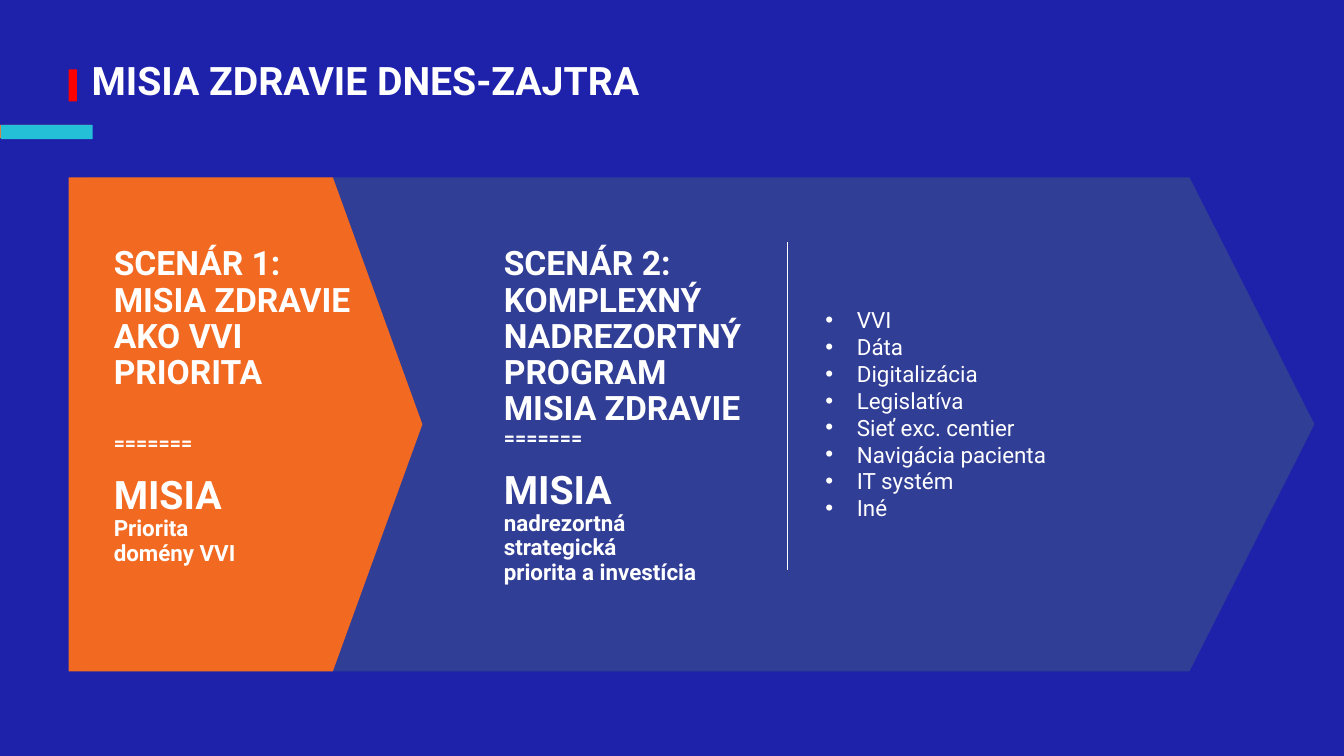
from lxml import etree
from pptx import Presentation
from pptx.dml.color import RGBColor
from pptx.enum.shapes import MSO_CONNECTOR as Connector, MSO_SHAPE as Shape
from pptx.enum.text import MSO_ANCHOR as Anchor
from pptx.oxml.ns import qn
from pptx.util import Pt

FONT = "Roboto"
WHITE = "FFFFFF"
ARROW_POINT = 0.253
TEXT_TOP = 46.1  # distance from the top of an arrow to its text
BLANK_LINE = 14.8

PROGRAM_AREAS = ["VVI", "Dáta", "Digitalizácia", "Legislatíva", "Sieť exc. centier",
                 "Navigácia pacienta", "IT systém", "Iné"]


def color(hex_code):
    return RGBColor.from_string(hex_code)


def add_filled(page, kind, box, fill):
    shape = page.shapes.add_shape(kind, *map(Pt, box))
    shape.shadow.inherit = False
    shape.fill.solid()
    shape.fill.fore_color.rgb = color(fill)
    shape.line.fill.background()
    return shape


def add_frame(page, box, anchor=Anchor.TOP):
    frame = page.shapes.add_textbox(*map(Pt, box)).text_frame
    frame.word_wrap = True
    frame.vertical_anchor = anchor
    return frame


def add_text(frame, text, size, bold=True, spacing=0.9, before=0, bullet=None):
    """Fill the first empty paragraph of the frame, or append a new one."""
    first = frame.paragraphs[0]
    para = frame.add_paragraph() if first.runs else first
    para.line_spacing = spacing
    para.space_before = Pt(before)
    if bullet:
        properties = para._p.get_or_add_pPr()
        properties.set("marL", str(Pt(22.5)))
        properties.set("indent", str(-Pt(22.5)))
        etree.SubElement(properties, qn("a:buFont"), typeface="Arial")
        etree.SubElement(properties, qn("a:buChar"), char=bullet)
    span = para.add_run()
    span.text = text
    span.font.name = FONT
    span.font.size = Pt(size)
    span.font.bold = bold
    span.font.color.rgb = color(WHITE)


def add_header(page, box):
    left, top, width, height = box
    add_filled(page, Shape.RECTANGLE, (0, top + 42.5, 65.5, 9.4), "ED7D31")
    add_filled(page, Shape.RECTANGLE, (0.7, top + 42.5, 65.5, 10.1), "23C0D7")
    add_filled(page, Shape.RECTANGLE, (left - 9.2, top + 2.7, 5.8, 23), "FF0000")
    add_text(add_frame(page, box, Anchor.MIDDLE), "MISIA ZDRAVIE DNES-ZAJTRA", 28, spacing=0.8)


def add_arrow(page, box, fill):
    add_filled(page, Shape.PENTAGON, box, fill).adjustments[0] = ARROW_POINT


def add_scenario(page, box, heading, mission, rule_gap=0):
    """Heading lines, a rule of equals signs, then the mission lines."""
    frame = add_frame(page, box)
    for line in heading:
        add_text(frame, line, 24)
    add_text(frame, "=======", 14, before=rule_gap)
    add_text(frame, "MISIA", 28, before=BLANK_LINE)
    for line in mission:
        add_text(frame, line, 16)


def add_divider(page, x, top, bottom):
    line = page.shapes.add_connector(Connector.STRAIGHT, Pt(x), Pt(top), Pt(x), Pt(bottom))
    line.line.color.rgb = color(WHITE)
    line.line.width = Pt(0.75)
    etree.SubElement(line._element.spPr, qn("a:effectLst"))


def add_priority_arrow(page, box):
    left, top, width, height = box
    add_arrow(page, box, "F26921")
    add_scenario(page, (left + 25.2, top + TEXT_TOP, 211, 238),
                 ["SCENÁR 1:", "MISIA ZDRAVIE", "AKO VVI", "PRIORITA"],
                 ["Priorita", "domény VVI"], rule_gap=2 * BLANK_LINE)


def add_program_arrow(page, box):
    left, top, width, height = box
    add_arrow(page, box, "313E96")
    add_scenario(page, (left + 290.9, top + TEXT_TOP, 188.6, 273.6),
                 ["SCENÁR 2:", "KOMPLEXNÝ NADREZORTNÝ PROGRAM MISIA ZDRAVIE"],
                 ["nadrezortná", "strategická", "priorita a investícia"])
    add_divider(page, left + 500.4, top + TEXT_TOP, top + 280.8)
    areas = add_frame(page, (left + 520.6, top + 88.6, 243.4, 162.7))
    for area in PROGRAM_AREAS:
        add_text(areas, area, 16, bold=False, spacing=1.0, bullet="•")


def main():
    deck = Presentation()
    deck.slide_width, deck.slide_height = Pt(960), Pt(540)
    page = deck.slides.add_slide(deck.slide_layouts[6])
    page.background.fill.solid()
    page.background.fill.fore_color.rgb = color("1E22AA")
    add_header(page, (58.3, 46.8, 843, 26.6))
    add_program_arrow(page, (61.9, 126.7, 877, 352.8))
    add_priority_arrow(page, (49, 126.7, 252.7, 352.8))
    deck.save("out.pptx")


if __name__ == "__main__":
    main()
